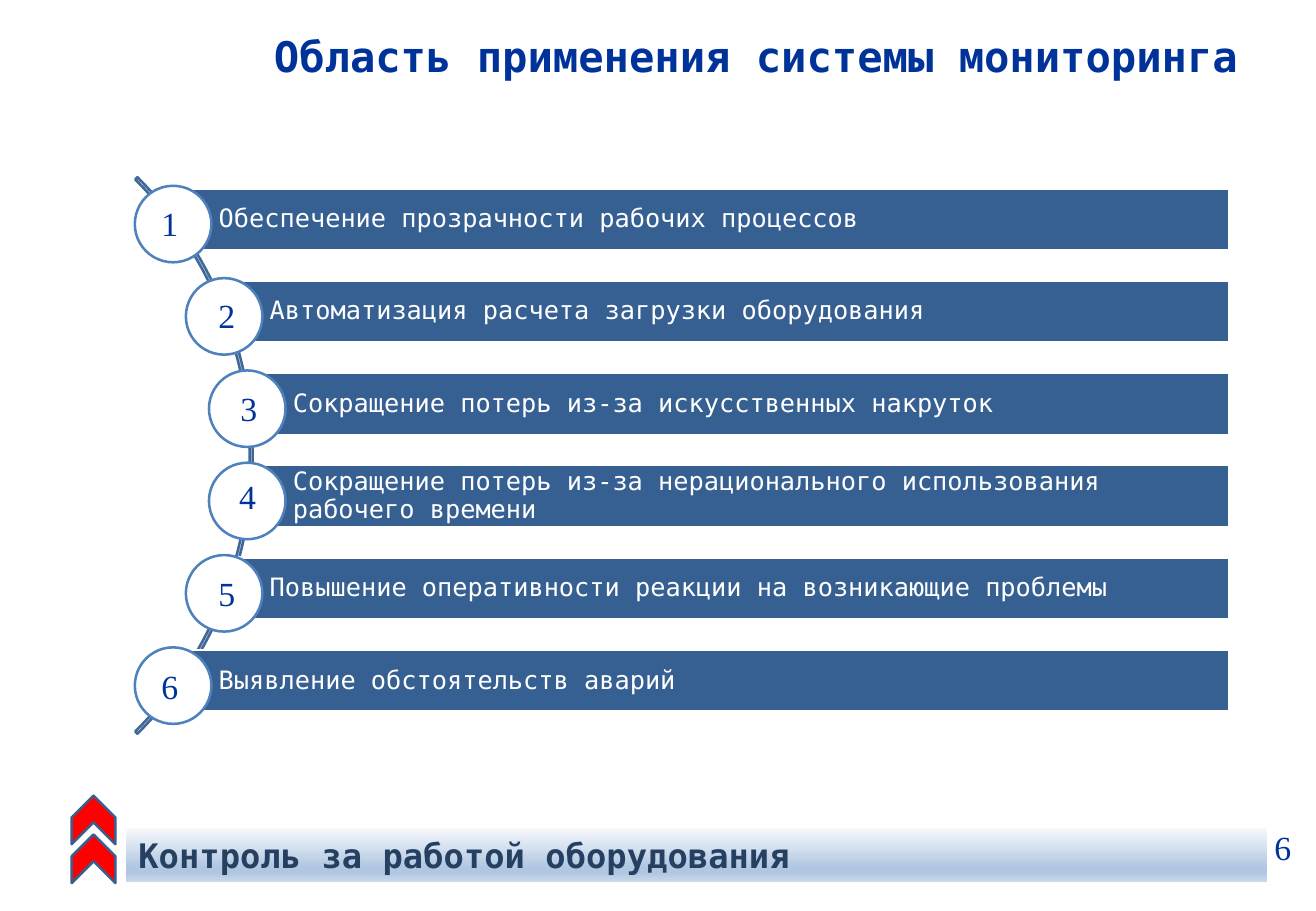
from dataclasses import dataclass

import lxml.etree
import pptx
import pptx.dml.color
import pptx.enum.shapes
import pptx.enum.text
import pptx.oxml.ns
import pptx.util

Inches = pptx.util.Inches
Pt = pptx.util.Pt
Shape = pptx.enum.shapes.MSO_SHAPE
Align = pptx.enum.text.PP_ALIGN
Anchor = pptx.enum.text.MSO_ANCHOR
qn = pptx.oxml.ns.qn

MONO = "DejaVu Sans Mono"
SERIF = "Times New Roman"
NAVY = "003399"
WHITE = "FFFFFF"
RIGHT = 10.12
TOP = 1.55
STEP = 0.76
RING = 0.63


@dataclass
class Item:
    text: str
    left: float  # left edge of the bar
    dx: float  # digit offset from the ring
    dy: float


@dataclass
class Style:
    size: float
    color: str
    font: str = MONO
    bold: bool = False
    align: Align = Align.LEFT


ITEMS = [
    Item("Обеспечение прозрачности рабочих процессов", 1.4, 0.12, 0.09),
    Item("Автоматизация расчета загрузки оборудования", 1.82, 0.17, 0.09),
    Item("Сокращение потерь из-за искусственных накруток", 2.01, 0.16, 0.09),
    Item("Сокращение потерь из-за нерационального использования рабочего времени",
         2.01, 0.15, 0.06),
    Item("Повышение оперативности реакции на возникающие проблемы", 1.82, 0.17, 0.1),
    Item("Выявление обстоятельств аварий", 1.4, 0.12, 0.1),
]
STOPS = [(0, "F6F9FC"), (74, "B0C6E1"), (83, "B0C6E1"), (100, "CAD9EB")]
DIGIT = Style(20, NAVY, SERIF)


def rgb(code: str) -> pptx.dml.color.RGBColor:
    return pptx.dml.color.RGBColor.from_string(code)


def write(shape, text: str, style: Style):
    frame = shape.text_frame
    frame.word_wrap = True
    frame.vertical_anchor = Anchor.TOP
    para = frame.paragraphs[0]
    para.text = text
    para.alignment = style.align
    font = para.font
    font.size = Pt(style.size)
    font.name = style.font
    font.bold = style.bold
    font.color.rgb = rgb(style.color)
    return para


def label(slide, box: tuple, text: str, style: Style) -> None:
    write(slide.shapes.add_textbox(*map(Inches, box)), text, style)


def draw(slide, kind: Shape, box: tuple, fill: str = "", line: str = ""):
    shape = slide.shapes.add_shape(kind, *map(Inches, box))
    shape.shadow.inherit = False
    if fill:
        shape.fill.solid()
        shape.fill.fore_color.rgb = rgb(fill)
    else:
        shape.fill.background()
    if line:
        shape.line.color.rgb = rgb(line)
        shape.line.width = Pt(1.5)
    else:
        shape.line.fill.background()
    return shape


def shade(shape, stops: list) -> None:
    """Fill the shape with a gradient running from top to bottom."""
    shape.fill.gradient()
    shape.fill.gradient_angle = 270
    group = shape._element.spPr.find(".//" + qn("a:gsLst"))
    for old in list(group):
        group.remove(old)
    for pos, code in stops:
        stop = lxml.etree.SubElement(group, qn("a:gs"), pos=str(pos * 1000))
        lxml.etree.SubElement(stop, qn("a:srgbClr"), val=code)


def row(slide, index: int, item: Item) -> None:
    top = TOP + index * STEP
    bar = draw(slide, Shape.RECTANGLE, (item.left, top, RIGHT - item.left, 0.51),
               "376092", WHITE)
    para = write(bar, item.text, Style(15, WHITE))
    para.line_spacing = 0.9
    para.space_after = Pt(5.25)
    frame = bar.text_frame
    frame.vertical_anchor = Anchor.MIDDLE
    frame.margin_left = Inches(0.4)
    frame.margin_top = frame.margin_right = frame.margin_bottom = Inches(0.04)
    x, y = item.left - 0.29, top - 0.02
    draw(slide, Shape.OVAL, (x, y, RING, RING), WHITE, "4F81BD")
    label(slide, (x + item.dx, y + item.dy, 0.33, 0.44), str(index + 1), DIGIT)


def main() -> None:
    deck = pptx.Presentation()
    deck.slide_width = Inches(10.83)
    deck.slide_height = Inches(7.5)
    slide = deck.slides.add_slide(deck.slide_layouts[6])

    label(slide, (2.11, 0.2, 8.22, 0.52), "Область применения системы мониторинга",
          Style(25, NAVY, bold=True, align=Align.CENTER))

    for top in (6.57, 6.89):
        mark = draw(slide, Shape.CHEVRON, (0.57, top, 0.4, 0.36), "FF0000", "3A5F8C")
        mark.rotation = 270
    foot = draw(slide, Shape.RECTANGLE, (1.04, 6.82, 9.39, 0.44))
    shade(foot, STOPS)
    write(foot, "Контроль за работой оборудования",
          Style(20, "254061", bold=True, align=Align.JUSTIFY))
    label(slide, (10.39, 6.76, 0.33, 0.44), "6", DIGIT)

    arc = draw(slide, Shape.BLOCK_ARC, (-4.4, 0.51, 6.48, 6.48), line="3F6797")
    for i, value in enumerate((189, 27, 0.004)):
        arc.adjustments[i] = value
    for index, item in enumerate(ITEMS):
        row(slide, index, item)

    deck.save("out.pptx")


if __name__ == "__main__":
    main()
